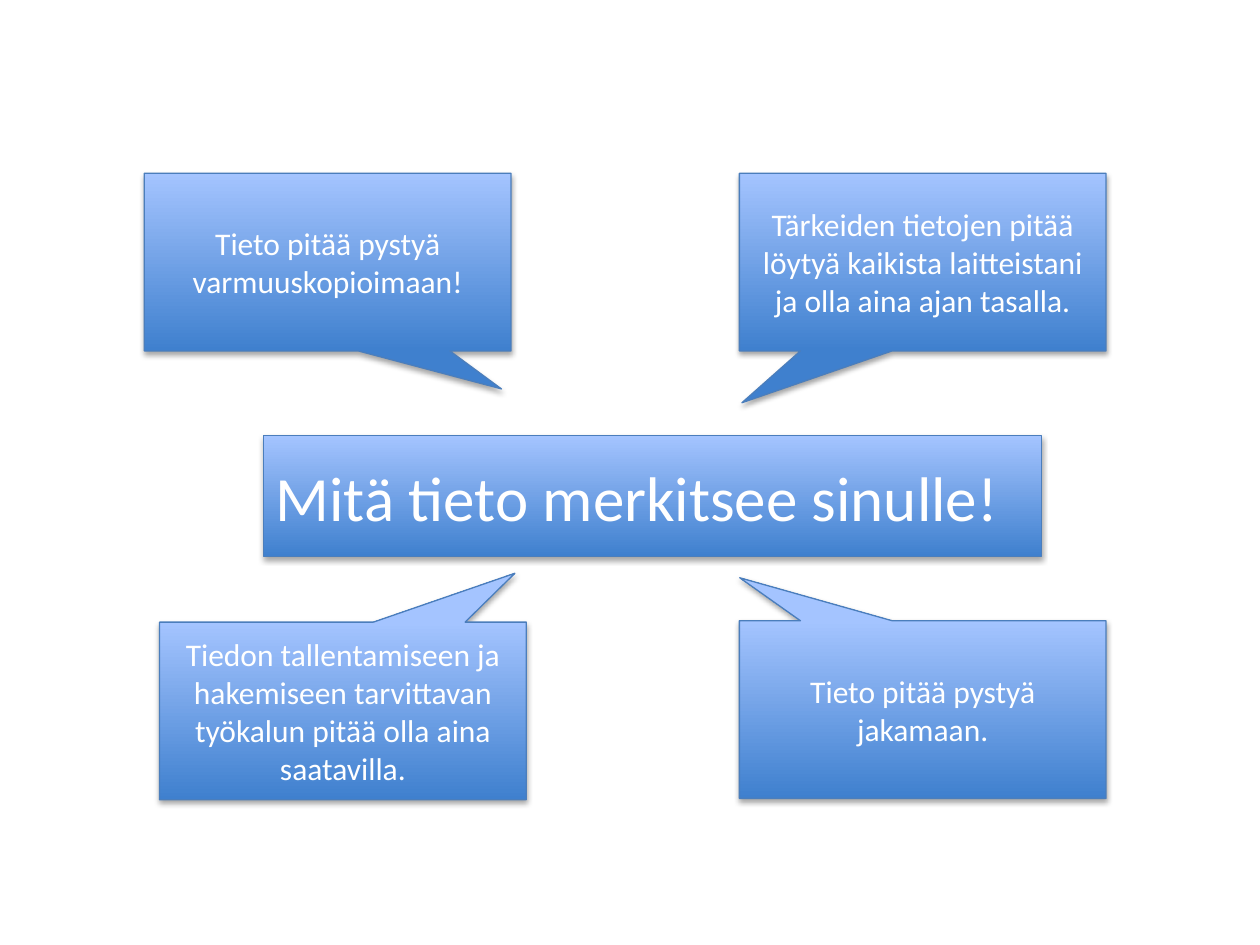
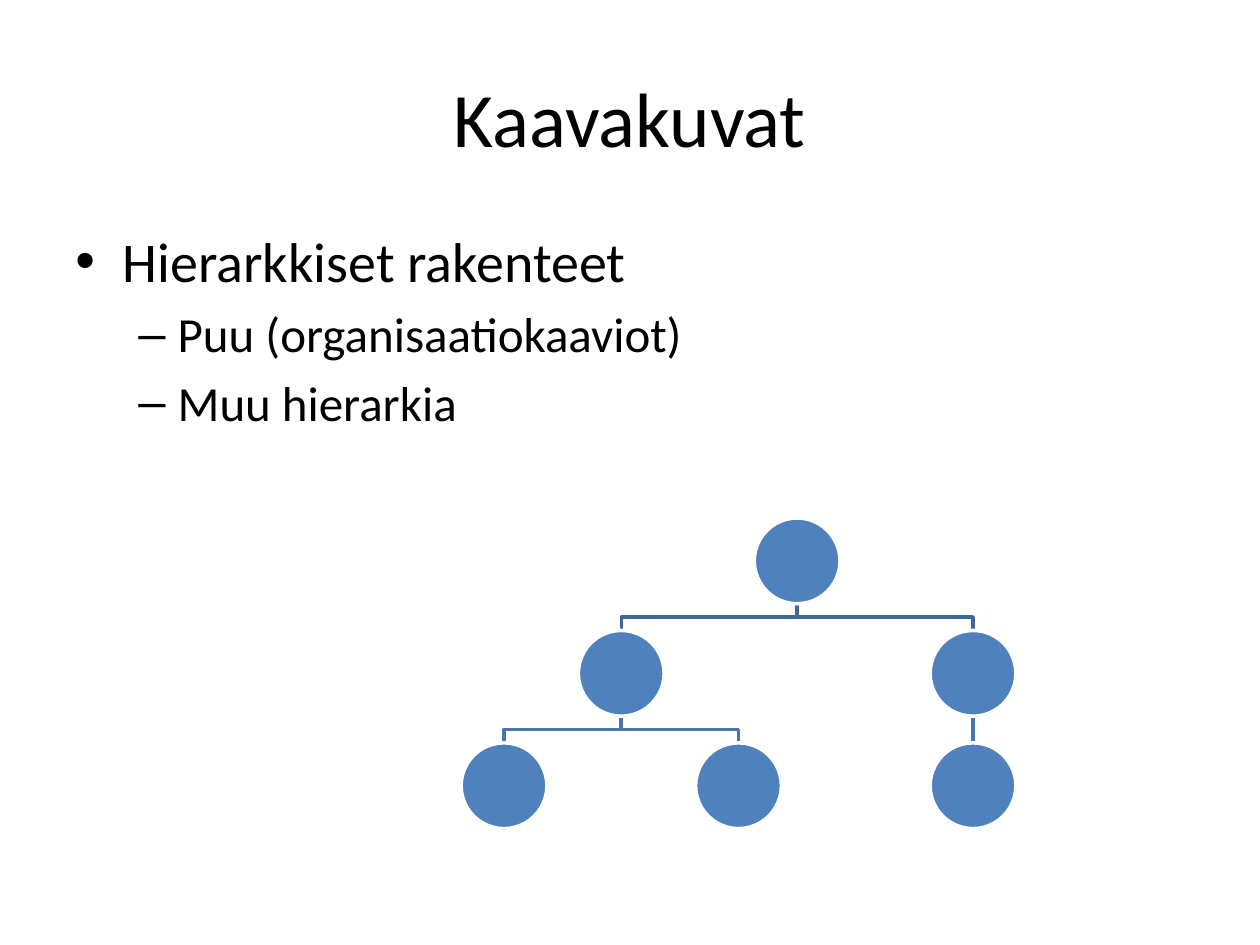
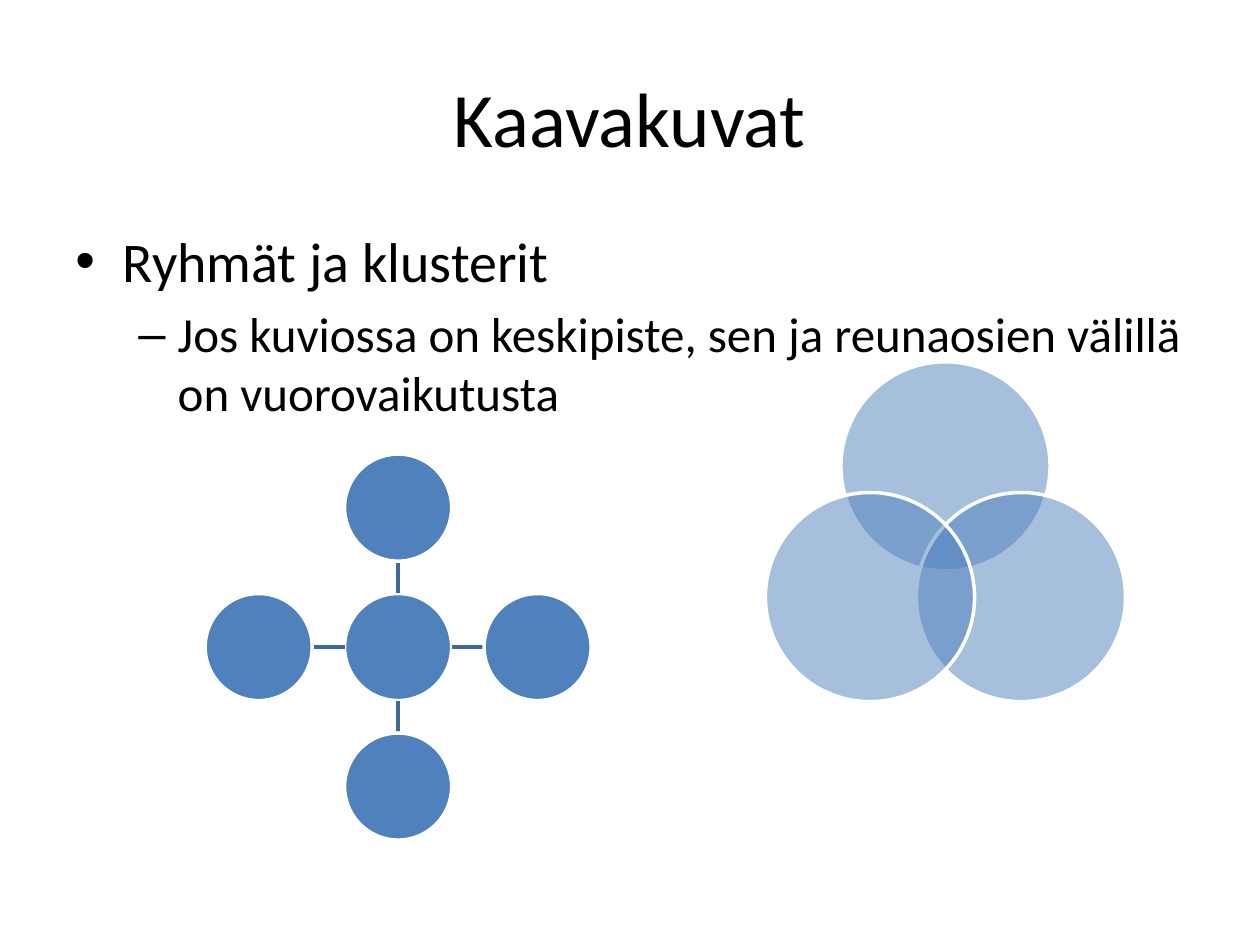
import math

from lxml import etree
from pptx import Presentation
from pptx.dml.color import RGBColor
from pptx.enum import shapes, text
from pptx.oxml import ns
from pptx.util import Pt

FONT = "Calibri"
COLORS = {
    "text": "000000", "white": "FFFFFF", "circle": "4F81BD",
    "grad_bottom": "3F80CE", "grad_top": "A4C4FF", "box_line": "4B7EBC",
    "link_dark": "3F6797", "link_light": "4875AC",
}
# bullet, left margin, hanging indent, size, space before
LEVELS = [("•", 27, 27, 32, 6.4), ("–", 58.5, 22.5, 28, 5.6)]


def rgb(name):
    return RGBColor.from_string(COLORS[name])


def add_xml(parent, tag, **attrs):
    return etree.SubElement(parent, ns.qn(tag), attrs)


def style_line(sp, color, width):
    sp.line.color.rgb = rgb(color)
    sp.line.width = Pt(width)


def style_font(p, size, color):
    f = p.font
    f.name, f.size, f.color.rgb = FONT, Pt(size), rgb(color)


def add_textbox(s, x, y, w, h):
    tf = s.shapes.add_textbox(Pt(x), Pt(y), Pt(w), Pt(h)).text_frame
    tf.word_wrap = True
    return tf


def add_title(s, title):
    tf = add_textbox(s, 36, 21.6, 648, 90)
    tf.vertical_anchor = text.MSO_ANCHOR.MIDDLE
    tf.text = title
    p = tf.paragraphs[0]
    p.alignment = text.PP_ALIGN.CENTER
    style_font(p, 44, "text")


def add_bullets(s, items):
    """Write (level, wording) items as a bulleted body."""
    tf = add_textbox(s, 36, 126, 648, 356.4)
    for i, (level, wording) in enumerate(items):
        bullet, margin, hanging, size, before = LEVELS[level]
        p = tf.add_paragraph() if i else tf.paragraphs[0]
        p.text = wording
        p.level = level
        if i:
            p.space_before = Pt(before)
        pPr = p._p.get_or_add_pPr()
        pPr.set("marL", str(Pt(margin)))
        pPr.set("indent", str(-Pt(hanging)))
        add_xml(pPr, "a:buFont", typeface="Arial")
        add_xml(pPr, "a:buChar", char=bullet)
        style_font(p, size, "text")


def add_shadow(sp):
    sp.shadow.inherit = False
    effects = sp._element.spPr.find(ns.qn("a:effectLst"))
    shadow = add_xml(effects, "a:outerShdw", blurRad=str(Pt(3.1)),
                     dist=str(Pt(1.8)), dir="5400000", rotWithShape="0")
    color = add_xml(shadow, "a:srgbClr", val="000000")
    add_xml(color, "a:alpha", val="35000")


def add_gradient_box(s, kind, box, wording, size, align):
    sp = s.shapes.add_shape(kind, *map(Pt, box))
    sp.fill.gradient()
    sp.fill.gradient_angle = 90
    for stop, color in zip(sp.fill.gradient_stops, ("grad_bottom", "grad_top")):
        stop.color.rgb = rgb(color)
    style_line(sp, "box_line", 0.75)
    add_shadow(sp)
    sp.text_frame.text = wording
    p = sp.text_frame.paragraphs[0]
    p.alignment = align
    style_font(p, size, "white")
    return sp


def add_callout(s, x, y, tip, wording):
    """Place a speech box; tip is the pointer's offset from the centre as shares of the size."""
    sp = add_gradient_box(s, shapes.MSO_SHAPE.RECTANGULAR_CALLOUT, (x, y, 209.5, 101.5),
                          wording, 18, text.PP_ALIGN.CENTER)
    for i, value in enumerate(tip):
        sp.adjustments[i] = value


def add_circle(s, cx, cy, d, alpha=None):
    sp = s.shapes.add_shape(shapes.MSO_SHAPE.OVAL, Pt(cx - d / 2), Pt(cy - d / 2), Pt(d), Pt(d))
    sp.shadow.inherit = False
    sp.fill.solid()
    sp.fill.fore_color.rgb = rgb("circle")
    if alpha:
        color = sp._element.spPr.find(ns.qn("a:solidFill"))[0]
        add_xml(color, "a:alpha", val=str(alpha * 1000))
    style_line(sp, "white", 2)


def add_straight(s, x1, y1, x2, y2, color):
    c = s.shapes.add_connector(shapes.MSO_CONNECTOR.STRAIGHT, Pt(x1), Pt(y1), Pt(x2), Pt(y2))
    style_line(c, color, 2)
    add_xml(c._element.spPr, "a:effectLst")


def add_branch(s, x1, y1, x2, y2, color):
    """Join a parent to a child below it, turning halfway down."""
    if x1 == x2:
        add_straight(s, x1, y1, x2, y2, color)
        return
    mid = (y1 + y2) / 2
    fb = s.shapes.build_freeform(Pt(x1), Pt(y1))
    fb.add_line_segments([(Pt(x), Pt(y)) for x, y in ((x1, mid), (x2, mid), (x2, y2))], close=False)
    sp = fb.convert_to_shape()
    sp.shadow.inherit = False
    sp.fill.background()
    style_line(sp, color, 2)


def add_tree(s):
    left, top, dx, dy, d = 288, 320.5, 67, 64.25, 49
    nodes = {"root": (2.5, 0), "a": (1, 1), "a1": (0, 2), "a2": (2, 2), "b": (4, 1), "b1": (4, 2)}
    links = [("b", "b1"), ("root", "b"), ("a", "a2"), ("a", "a1"), ("root", "a")]
    centres = {k: (left + col * dx, top + row * dy) for k, (col, row) in nodes.items()}
    for parent, child in links:
        (x1, y1), (x2, y2) = centres[parent], centres[child]
        color = "link_dark" if parent == "root" else "link_light"
        add_branch(s, x1, y1 + d / 2, x2, y2 - d / 2, color)
    for cx, cy in centres.values():
        add_circle(s, cx, cy, d)


def add_hub(s):
    cx, cy, pitch, d = 227.5, 369.75, 79.7, 61.2
    add_circle(s, cx, cy, d)
    for ux, uy in ((0, -1), (1, 0), (0, 1), (-1, 0)):
        near, far = d / 2, pitch - d / 2
        add_straight(s, cx + ux * near, cy + uy * near, cx + ux * far, cy + uy * far, "link_dark")
        add_circle(s, cx + ux * pitch, cy + uy * pitch, d)


def add_venn(s):
    cx, cy, radius = 540.3, 316.3, 49.8
    for angle in (-90, 30, 150):
        a = math.radians(angle)
        add_circle(s, cx + radius * math.cos(a), cy + radius * math.sin(a), 119.5, alpha=50)


def main():
    prs = Presentation()
    prs.slide_width, prs.slide_height = Pt(720), Pt(540)
    blank = prs.slide_layouts[6]

    s = prs.slides.add_slide(blank)
    add_gradient_box(s, shapes.MSO_SHAPE.RECTANGLE, (150.5, 249, 444.5, 69),
                     "Mitä tieto merkitsee sinulle!", 36, text.PP_ALIGN.LEFT)
    for callout in (
        (82.5, 99, (0.474, 0.714), "Tieto pitää pystyä varmuuskopioimaan!"),
        (91.2, 355.5, (0.469, -0.775),
         "Tiedon tallentamiseen ja hakemiseen tarvittavan työkalun pitää olla aina saatavilla."),
        (422.5, 354.7, (-0.499, -0.742), "Tieto pitää pystyä jakamaan."),
        (422.5, 99, (-0.493, 0.792),
         "Tärkeiden tietojen pitää löytyä kaikista laitteistani ja olla aina ajan tasalla."),
    ):
        add_callout(s, *callout)

    s = prs.slides.add_slide(blank)
    add_title(s, "Kaavakuvat")
    add_bullets(s, [(0, "Hierarkkiset rakenteet"), (1, "Puu (organisaatiokaaviot)"),
                    (1, "Muu hierarkia")])
    add_tree(s)

    s = prs.slides.add_slide(blank)
    add_title(s, "Kaavakuvat")
    add_bullets(s, [(0, "Ryhmät ja klusterit"),
                    (1, "Jos kuviossa on keskipiste, sen ja reunaosien välillä on vuorovaikutusta")])
    add_hub(s)
    add_venn(s)

    prs.save("out.pptx")


if __name__ == "__main__":
    main()
